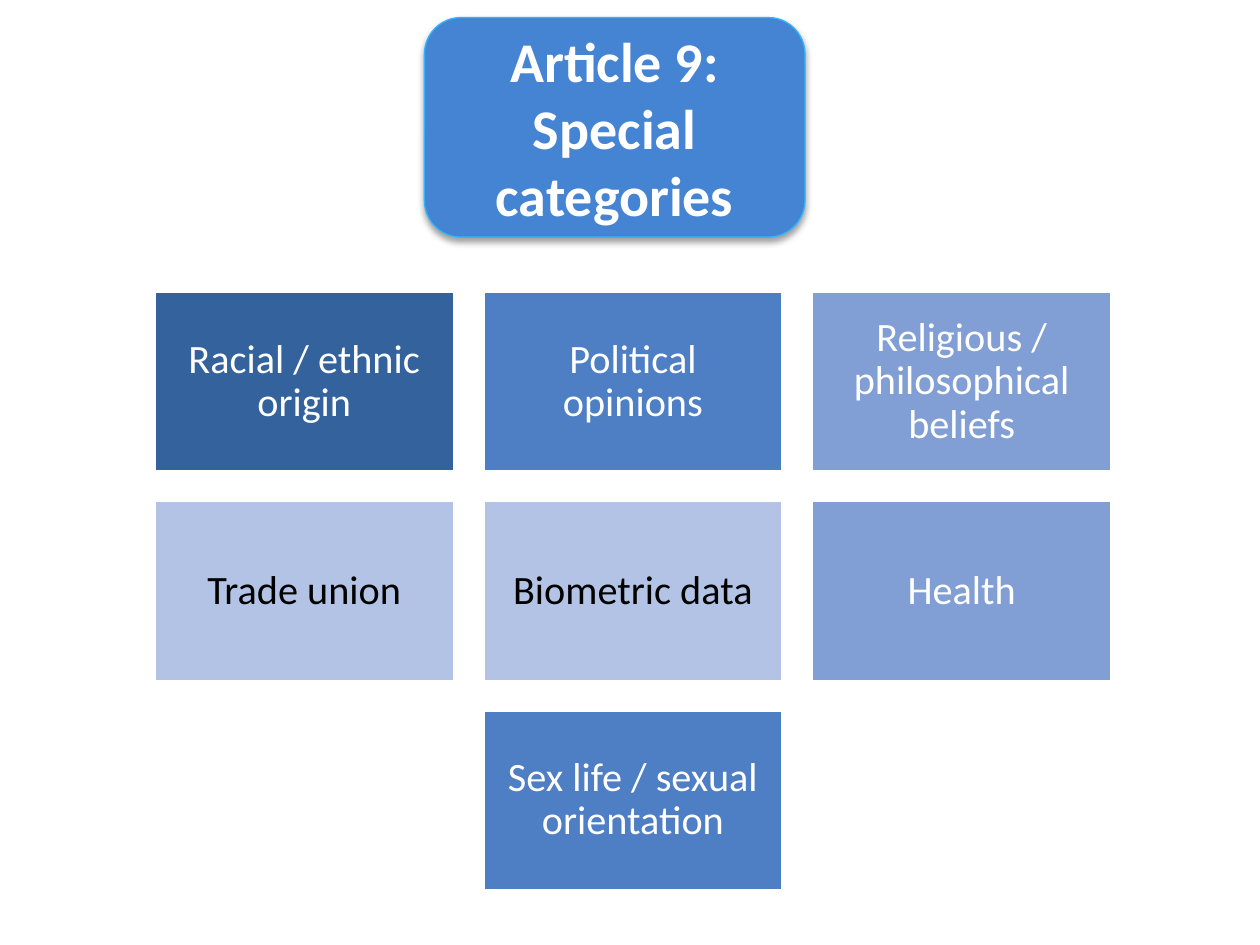
import pptx
import pptx.util
import pptx.dml.color
import pptx.enum.shapes
import pptx.enum.text
import pptx.oxml
import pptx.oxml.ns
from dataclasses import dataclass

Pt = pptx.util.Pt
Kind = pptx.enum.shapes.MSO_SHAPE


@dataclass(frozen=True)
class Theme:
    """Colours, font and type sizes."""
    font: str = "Calibri"
    head: int = 32
    body: int = 23
    white: str = "FFFFFF"
    black: str = "000000"
    plate: str = "4584D3"
    edge: str = "31B6FD"
    deep: str = "33629C"
    mid: str = "4E7EC4"
    soft: str = "819FD4"
    pale: str = "B3C3E5"


THEME = Theme()
ROWS = [
    [("Racial / ethnic origin", THEME.deep),
     ("Political opinions", THEME.mid),
     ("Religious / philosophical beliefs", THEME.soft)],
    [("Trade union", THEME.pale),
     ("Biometric data", THEME.pale),
     ("Health", THEME.soft)],
    [("Sex life / sexual orientation", THEME.mid)],
]


def tint(code):
    """Return the colour for a hex code."""
    return pptx.dml.color.RGBColor.from_string(code)


def write(shape, text, size, color, bold=False, space=1.0, pad=(7.2, 3.6)):
    """Fill a shape with centred text, one paragraph a line."""
    frame = shape.text_frame
    frame.text = text
    frame.word_wrap = True
    frame.auto_size = pptx.enum.text.MSO_AUTO_SIZE.NONE
    frame.vertical_anchor = pptx.enum.text.MSO_ANCHOR.MIDDLE
    frame.margin_left = frame.margin_right = Pt(pad[0])
    frame.margin_top = frame.margin_bottom = Pt(pad[1])
    for para in frame.paragraphs:
        para.alignment = pptx.enum.text.PP_ALIGN.CENTER
        para.line_spacing = space
        para.font.name = THEME.font
        para.font.size = Pt(size)
        para.font.bold = bold
        para.font.color.rgb = tint(color)


def block(slide, kind, box, fill, line, width):
    """Add a filled shape without a shadow."""
    shape = slide.shapes.add_shape(kind, *map(Pt, box))
    shape.shadow.inherit = False
    shape.fill.solid()
    shape.fill.fore_color.rgb = tint(fill)
    shape.line.color.rgb = tint(line)
    shape.line.width = Pt(width)
    return shape


def shade(shape):
    """Give a shape a soft shadow below it."""
    xml = (
        f'<a:outerShdw {pptx.oxml.ns.nsdecls("a")} blurRad="{Pt(4)}" '
        f'dist="{Pt(2)}" dir="5400000" algn="t" rotWithShape="0">'
        f'<a:srgbClr val="{THEME.black}"><a:alpha val="38000"/></a:srgbClr>'
        '</a:outerShdw>'
    )
    props = shape._element.spPr
    props.find(pptx.oxml.ns.qn("a:effectLst")).append(pptx.oxml.parse_xml(xml))


def header(slide, box):
    """Place the title on its rounded plate."""
    plate = block(slide, Kind.ROUNDED_RECTANGLE, box,
                  THEME.plate, THEME.edge, 0.75)
    shade(plate)
    title = slide.shapes.title
    title._element.addprevious(plate._element)
    title.left, title.top, title.width, title.height = map(Pt, box)
    write(title, "Article 9:\nSpecial categories", THEME.head, THEME.white,
          bold=True, pad=(13.2, 3.6))


def grid(slide, box, rows, gap=17):
    """Place the category cells, with short rows centred."""
    left, top, width, height = box
    cols = max(map(len, rows))
    wide = (width - gap * (cols - 1)) / cols
    high = (height - gap * (len(rows) - 1)) / len(rows)
    for r, row in enumerate(rows):
        shift = (cols - len(row)) / 2
        for c, (text, fill) in enumerate(row):
            spot = (left + (c + shift) * (wide + gap),
                    top + r * (high + gap), wide, high)
            cell = block(slide, Kind.RECTANGLE, spot, fill, THEME.white, 1.25)
            ink = THEME.black if fill == THEME.pale else THEME.white
            write(cell, text, THEME.body, ink, space=0.9, pad=(7.2, 7.2))


def main():
    """Build the slide and save it."""
    deck = pptx.Presentation()
    deck.slide_width, deck.slide_height = Pt(720), Pt(540)
    slide = deck.slides.add_slide(deck.slide_layouts[5])
    header(slide, (242.5, 10, 217.5, 125.5))
    grid(slide, (88.5, 167, 546.5, 341.5), ROWS)
    deck.save("out.pptx")


if __name__ == "__main__":
    main()
